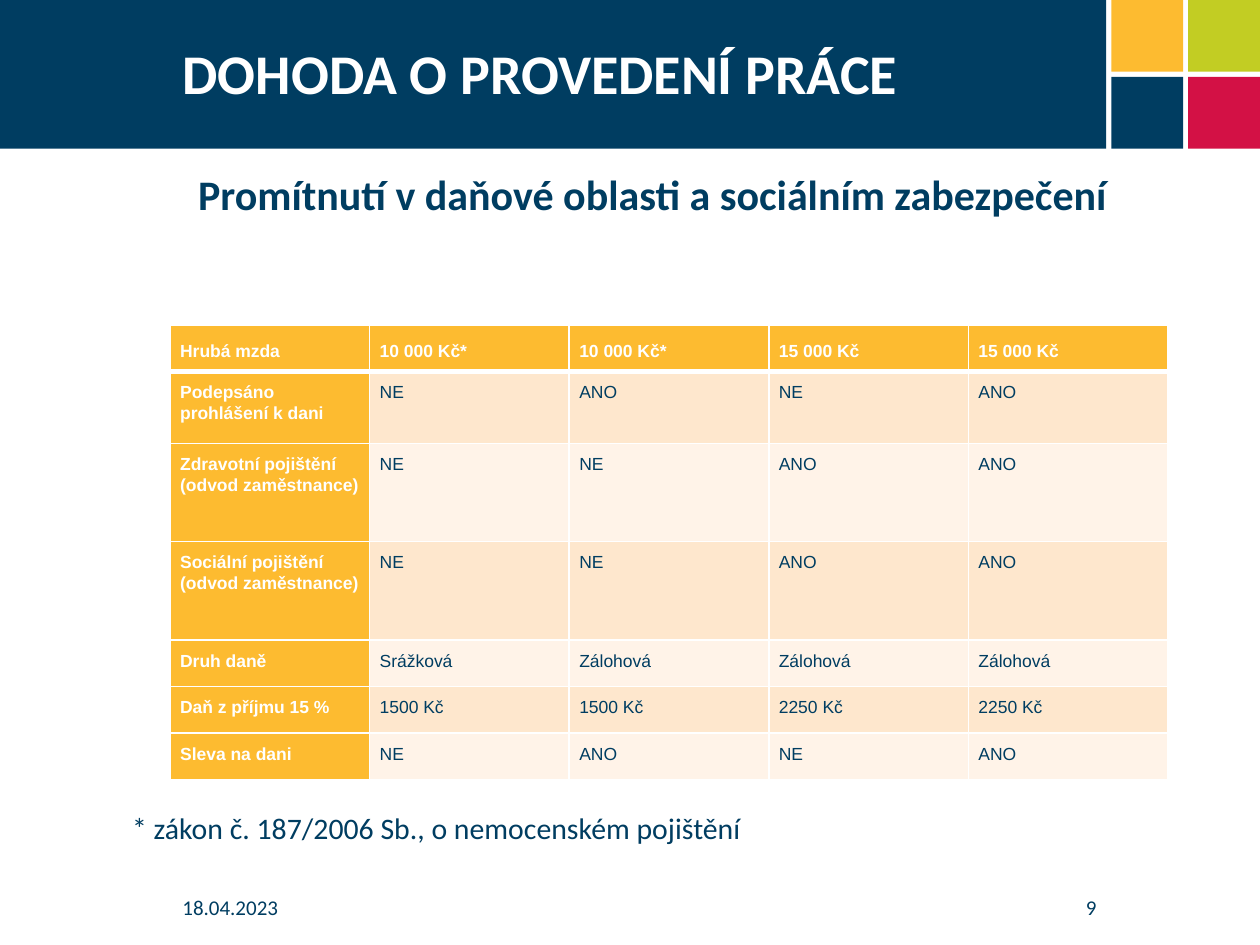
from pptx import Presentation
from pptx.dml.color import RGBColor
from pptx.enum.shapes import MSO_SHAPE
from pptx.enum.text import MSO_ANCHOR, PP_ALIGN
from pptx.oxml import parse_xml
from pptx.oxml.ns import nsdecls
from pptx.util import Inches, Pt

C = {k: RGBColor.from_string(v) for k, v in {
    "navy": "003D61", "red": "D31145", "lime": "C2CD23", "amber": "FDBB30",
    "white": "FFFFFF", "peach": "FEE7CD", "cream": "FFF3E8"}.items()}


def write(tf, text, size, color, bold=False, align=PP_ALIGN.LEFT, font="Calibri"):
    tf.word_wrap = True
    tf.text = text
    p = tf.paragraphs[0]
    p.alignment = align
    f = p.runs[0].font
    f.name, f.size, f.bold = font, Pt(size), bold
    f.color.rgb = C[color]
    return p


prs = Presentation()
prs.slide_width, prs.slide_height = Inches(10), Inches(7.5)
s = prs.slides.add_slide(prs.slide_layouts[5])

square, pitch = 0.57, 0.61
right = 10 - square
blocks = [(0, 0, right - pitch - 0.04, pitch + square, "navy")]
for col, row, color in [(1, 1, "red"), (1, 0, "lime"), (0, 1, "navy"), (0, 0, "amber")]:
    blocks.append((right - pitch * (1 - col), pitch * row, square, square, color))
for x, y, w, h, color in blocks:
    sp = s.shapes.add_shape(MSO_SHAPE.RECTANGLE, Inches(x), Inches(y), Inches(w), Inches(h))
    sp.shadow.inherit = False
    sp.fill.solid()
    sp.fill.fore_color.rgb = C[color]
    sp.line.fill.background()

title = s.shapes.title
title.left, title.top, title.width, title.height = Inches(1.35), 0, Inches(7.43), Inches(1.15)
title.text_frame.vertical_anchor = MSO_ANCHOR.MIDDLE
write(title.text_frame, "DOHODA O PROVEDENÍ PRÁCE", 32, "white", True)
s.shapes._spTree.append(title._element)

texts = [
    (0.95, 1.29, 8.46, 0.55, "Promítnutí v daňové oblasti a sociálním zabezpečení", 24, True,
     PP_ALIGN.CENTER, MSO_ANCHOR.TOP),
    (0.95, 6.38, 8.46, 0.4, "* zákon č. 187/2006 Sb., o nemocenském pojištění", 17, False,
     PP_ALIGN.LEFT, MSO_ANCHOR.TOP),
    (1.35, 6.83, 1.5, 0.52, "18.04.2023", 12, False, PP_ALIGN.LEFT, MSO_ANCHOR.BOTTOM),
    (6.79, 6.83, 2.01, 0.52, "9", 12, False, PP_ALIGN.RIGHT, MSO_ANCHOR.BOTTOM),
]
for x, y, w, h, text, size, bold, align, anchor in texts:
    tf = s.shapes.add_textbox(Inches(x), Inches(y), Inches(w), Inches(h)).text_frame
    tf.vertical_anchor = anchor
    write(tf, text, size, "navy", bold, align)

rows = [
    ["Hrubá mzda", "10 000 Kč*", "10 000 Kč*", "15 000 Kč", "15 000 Kč"],
    ["Podepsáno prohlášení k dani", "NE", "ANO", "NE", "ANO"],
    ["Zdravotní pojištění (odvod zaměstnance)", "NE", "NE", "ANO", "ANO"],
    ["Sociální pojištění (odvod zaměstnance)", "NE", "NE", "ANO", "ANO"],
    ["Druh daně", "Srážková", "Zálohová", "Zálohová", "Zálohová"],
    ["Daň z příjmu 15 %", "1500 Kč", "1500 Kč", "2250 Kč", "2250 Kč"],
    ["Sleva na dani", "NE", "ANO", "NE", "ANO"],
]
heights = [0.37, 0.57, 0.78, 0.78, 0.37, 0.37, 0.37]
table = s.shapes.add_table(len(rows), len(rows[0]), Inches(1.35), Inches(2.58),
                           Inches(7.92), Inches(sum(heights))).table
for row, height in zip(table.rows, heights):
    row.height = Inches(height)

for i, values in enumerate(rows):
    for j, value in enumerate(values):
        cell = table.cell(i, j)
        head = i == 0 or j == 0
        cell.margin_left = cell.margin_right = Inches(0.08)
        cell.margin_top = cell.margin_bottom = Inches(0.08)
        cell.vertical_anchor = MSO_ANCHOR.TOP if i else MSO_ANCHOR.BOTTOM
        cell.fill.solid()
        cell.fill.fore_color.rgb = C["amber" if head else "peach" if i % 2 else "cream"]
        p = write(cell.text_frame, value, 10, "white" if head else "navy", head, font="Arial")
        p.line_spacing, p.space_after = 1.07, Pt(15)
        widths = {"L": 1, "R": 1, "T": 3 if i == 1 else 1, "B": 1 if i else 3}
        for k, (side, width) in enumerate(widths.items()):
            cell._tc.get_or_add_tcPr().insert(k, parse_xml(
                f'<a:ln{side} {nsdecls("a")} w="{Pt(width)}"><a:solidFill>'
                f'<a:srgbClr val="{C["white"]}"/></a:solidFill></a:ln{side}>'))

prs.save("out.pptx")
